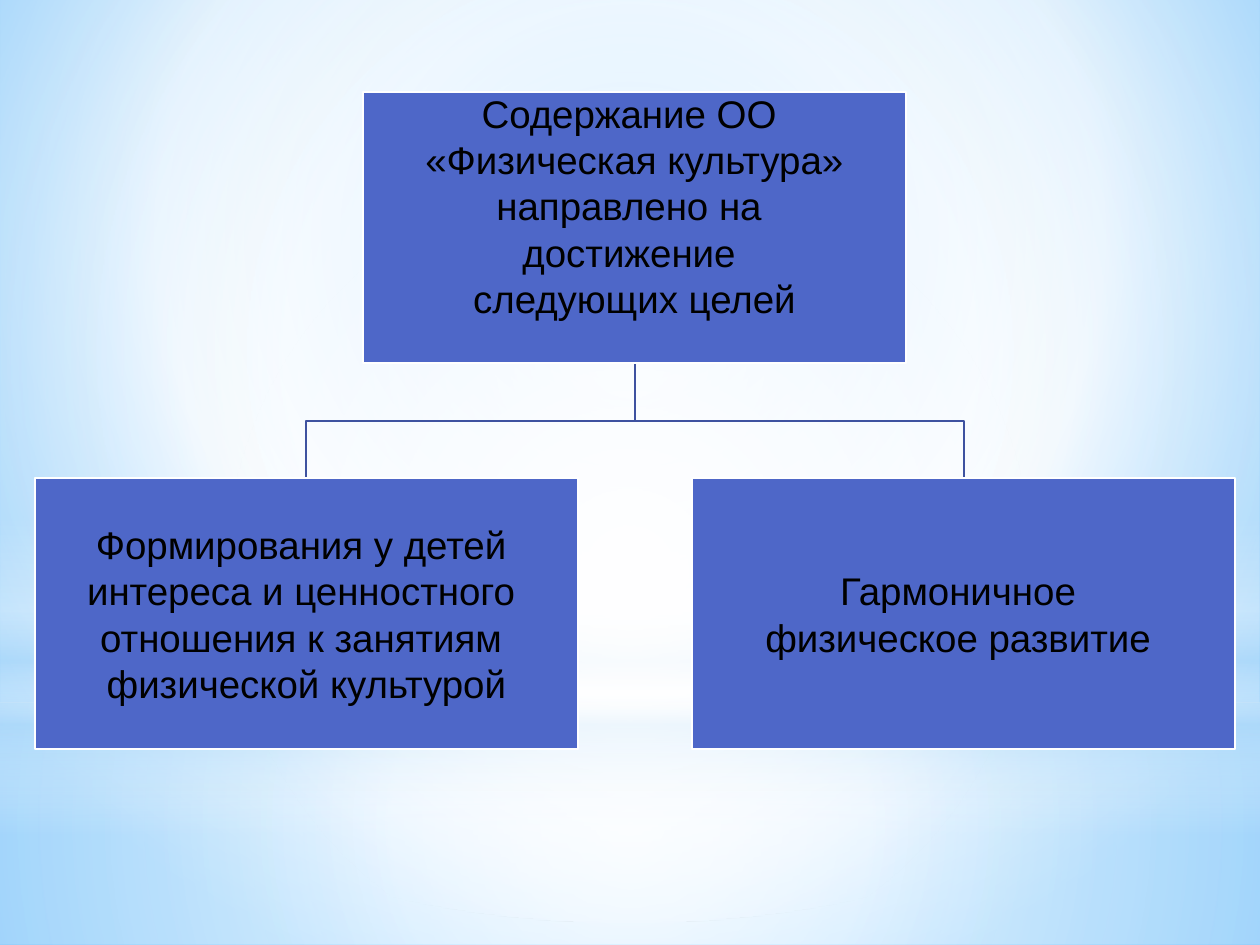
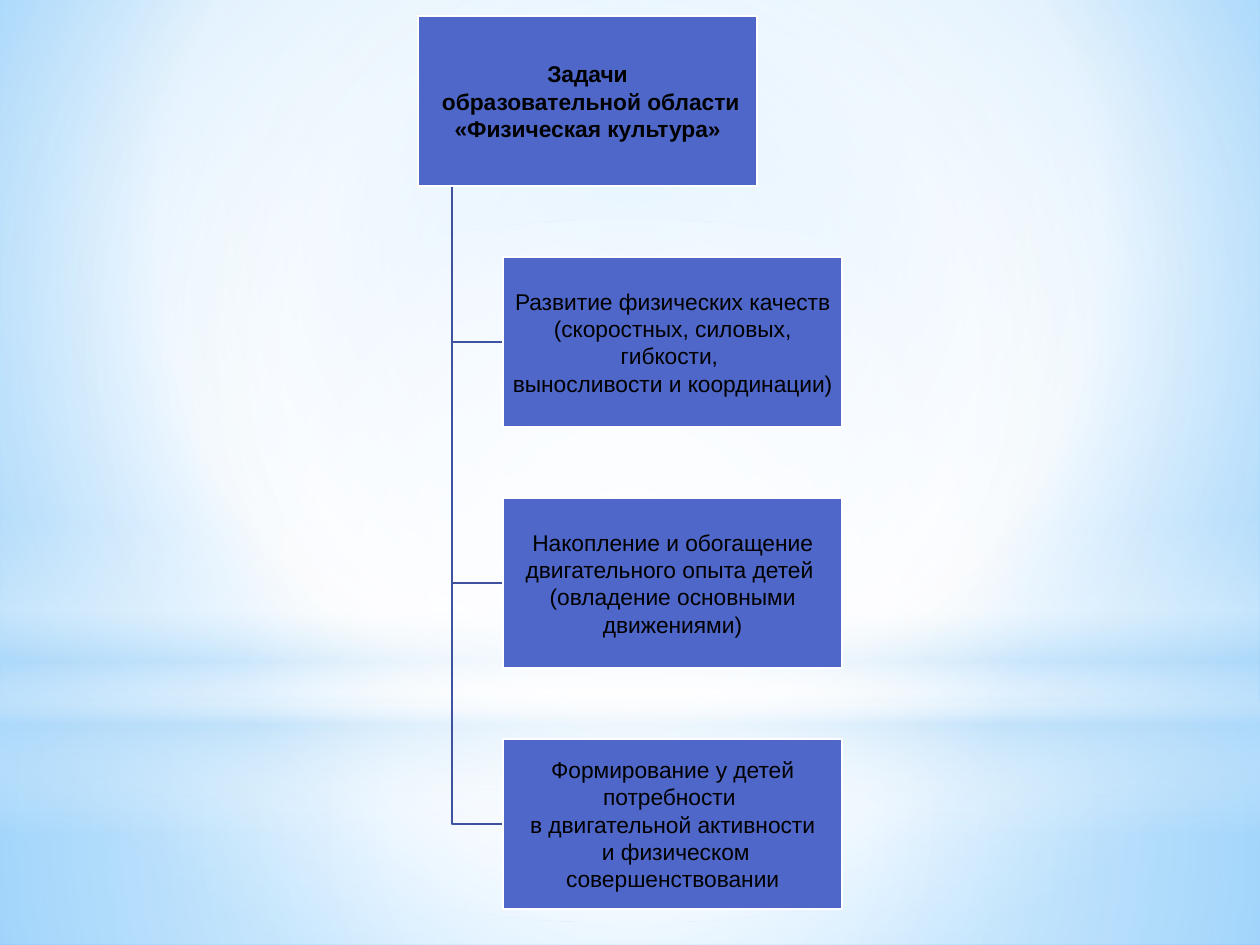
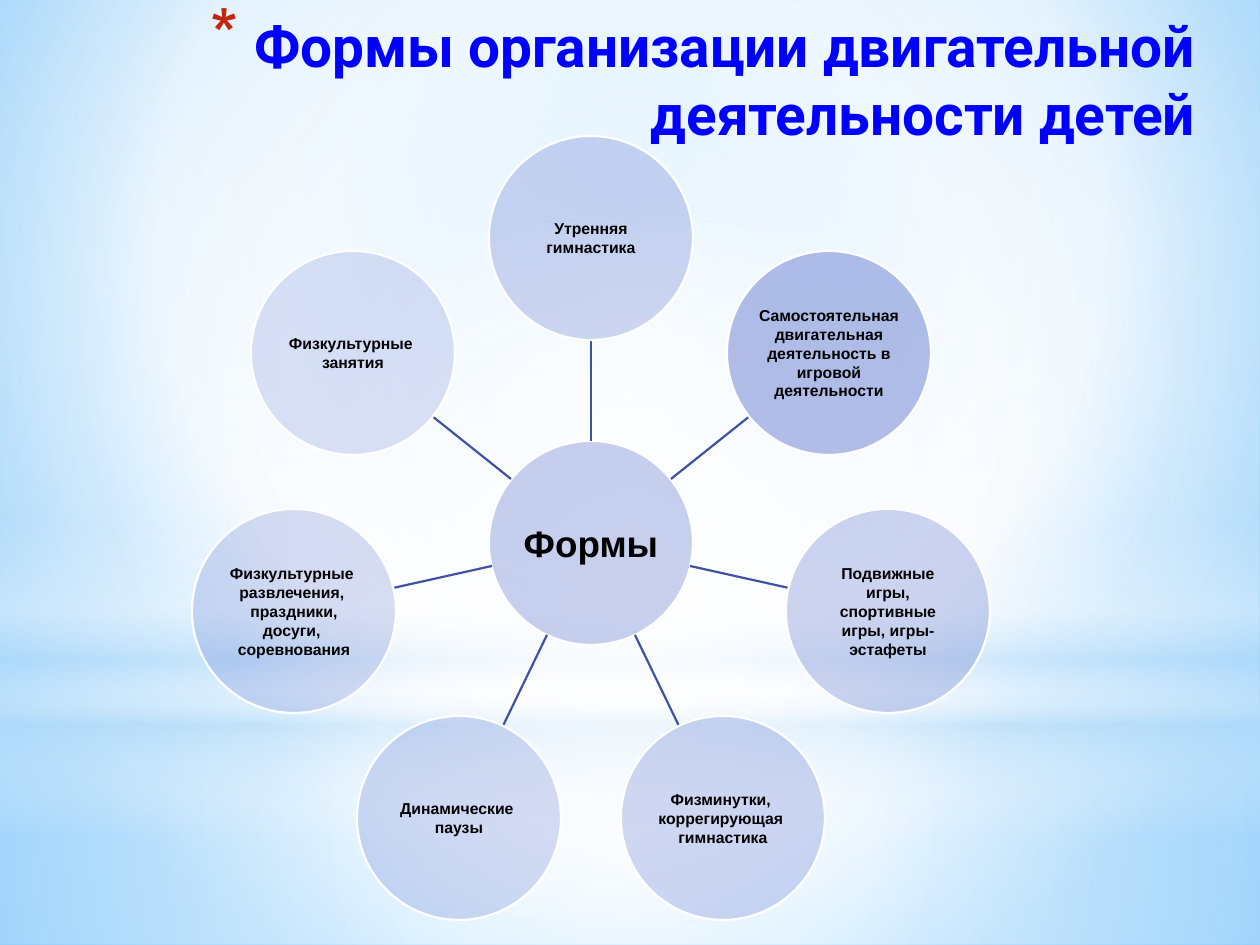
"""Build three slides of diagrams on the goals, tasks and forms of physical education."""
from math import cos, pi, sin

from lxml.etree import SubElement
from pptx import Presentation
from pptx.dml.color import RGBColor
from pptx.enum.shapes import MSO_CONNECTOR, MSO_SHAPE
from pptx.enum.text import MSO_ANCHOR, PP_ALIGN
from pptx.oxml.ns import qn
from pptx.util import Pt

PX = 7257
WIDTH, HEIGHT = 1260, 945
COLORS = {
    "node": "4E67C8", "branch": "3E52A0", "white": "FFFFFF", "haze": "B4DCFA",
    "sky": "9ED5FF", "deep": "5BB9FF", "text": "000000", "title": "0000FF", "bullet": "C3260C",
}
RGB = {name: RGBColor.from_string(value) for name, value in COLORS.items()}
LINE_WIDTH = Pt(1.25)
LEADING = 1.2


def paint_gradient(owner, stops, focus=None):
    """Fill with (position, colour, opacity) stops, around a focus or downwards."""
    fill = owner.fill if hasattr(owner, "fill") else owner.background.fill
    fill.gradient()
    gradient = next(owner.element.iter(qn("a:gradFill")))
    gradient.clear()
    stop_list = SubElement(gradient, qn("a:gsLst"))
    for position, name, opacity in stops:
        stop = SubElement(stop_list, qn("a:gs"), pos=str(position * 1000))
        color = SubElement(stop, qn("a:srgbClr"), val=COLORS[name])
        SubElement(color, qn("a:alpha"), val=str(opacity * 1000))
    if focus:
        radial = SubElement(gradient, qn("a:path"), path="circle")
        edges = {side: str(value * 1000) for side, value in zip("ltrb", focus)}
        SubElement(radial, qn("a:fillToRect"), **edges)
    else:
        SubElement(gradient, qn("a:lin"), ang="5400000", scaled="0")


def add_node(slide, kind, box, lines, size, bold=False, opacity=100, inset=1, bottom=1):
    """Add a filled shape with centred text lines."""
    shape = slide.shapes.add_shape(kind, *[value * PX for value in box])
    shape.shadow.inherit = False
    shape.fill.solid()
    shape.fill.fore_color.rgb = RGB["node"]
    if opacity < 100:
        color = next(shape.element.spPr.iter(qn("a:srgbClr")))
        SubElement(color, qn("a:alpha"), val=str(opacity * 1000))
    shape.line.color.rgb = RGB["white"]
    shape.line.width = LINE_WIDTH
    frame = shape.text_frame
    frame.text = "\n".join(lines)
    frame_format = {
        "word_wrap": True, "vertical_anchor": MSO_ANCHOR.MIDDLE, "margin_left": inset * PX,
        "margin_right": inset * PX, "margin_top": inset * PX, "margin_bottom": bottom * PX,
    }
    for name, value in frame_format.items():
        setattr(frame, name, value)
    for paragraph in frame.paragraphs:
        paragraph.alignment = PP_ALIGN.CENTER
        paragraph.line_spacing = Pt(size * LEADING)
        font = paragraph.runs[0].font
        for name, value in {"name": "Arial", "size": Pt(size), "bold": bold}.items():
            setattr(font, name, value)
        font.color.rgb = RGB["text"]


presentation = Presentation()
presentation.slide_width = WIDTH * PX
presentation.slide_height = HEIGHT * PX
layout = presentation.slide_layouts[6]
for placeholder in list(layout.placeholders):
    layout.shapes.element.remove(placeholder.element)
goals, tasks, forms = [presentation.slides.add_slide(layout) for _ in range(3)]

paint_gradient(layout, [(0, "sky", 100), (60, "white", 100), (100, "deep", 100)], (20, 10, 20, 60))
centre = (50, 50, 50, 50)
backdrop = [
    (MSO_SHAPE.RECTANGLE, 703, 242, centre,
     [(0, "white", 91), (37, "white", 76), (100, "haze", 79)]),
    (MSO_SHAPE.RECTANGLE, 0, 703, centre,
     [(0, "white", 89), (48, "white", 62), (100, "haze", 79)]),
    (MSO_SHAPE.RECTANGLE, 519, 315, None,
     [(0, "white", 0), (29, "white", 30), (45, "haze", 40),
      (55, "white", 26), (65, "haze", 60), (100, "white", 0)]),
    (MSO_SHAPE.OVAL, 220, 703, centre, [(0, "white", 100), (56, "white", 0)]),
]
for kind, top, height, focus, stops in backdrop:
    layer = goals.shapes.add_shape(kind, 0, top * PX, WIDTH * PX, height * PX)
    layer.shadow.inherit = False
    layer.line.fill.background()
    paint_gradient(layer, stops, focus)
    layout.shapes.element.append(layer.element)

branches = [(goals, [(635, 364), (635, 421), (x, 421), (x, 478)]) for x in (964, 306)]
branches += [(tasks, [(452, 186), (452, y), (503, y)]) for y in (824, 583, 342)]
for slide, points in branches:
    builder = slide.shapes.build_freeform(*points[0], scale=float(PX))
    builder.add_line_segments(points[1:], close=False)
    branch = builder.convert_to_shape()
    branch.shadow.inherit = False
    branch.fill.background()
    branch.line.color.rgb = RGB["branch"]
    branch.line.width = LINE_WIDTH

goal_nodes = [
    (363, 92, 46, ["Содержание ОО ", "«Физическая культура»", "направлено на ",
                   "достижение ", "следующих целей"]),
    (35, 478, 2, ["Формирования у детей ", "интереса и ценностного ",
                  "отношения к занятиям ", "физической культурой"]),
    (692, 478, 2, ["Гармоничное ", "физическое развитие "]),
]
for left, top, bottom, lines in goal_nodes:
    add_node(goals, MSO_SHAPE.RECTANGLE, (left, top, 543, 271), lines, 22, inset=2, bottom=bottom)

task_nodes = [
    ["Задачи", " образовательной области", "«Физическая культура»"],
    ["Развитие физических качеств", "(скоростных, силовых, гибкости, ",
     "выносливости и координации)"],
    ["Накопление и обогащение", "двигательного опыта детей ", "(овладение основными движениями)"],
    ["Формирование у детей потребности ", "в двигательной активности",
     " и физическом совершенствовании"],
]
for row, lines in enumerate(task_nodes):
    left = 503 if row else 418
    add_node(tasks, MSO_SHAPE.RECTANGLE, (left, 16 + 241 * row, 339, 170), lines, 13, bold=row == 0)

title = forms.shapes.add_textbox(74 * PX, 0, 1134 * PX, 157 * PX)
title.text_frame.word_wrap = True
title.text_frame.vertical_anchor = MSO_ANCHOR.MIDDLE
paragraph = title.text_frame.paragraphs[0]
paragraph.alignment = PP_ALIGN.RIGHT
paragraph.line_spacing = Pt(32.4 * LEADING)
run = paragraph.add_run()
run.text = "Формы организации двигательной деятельности детей"
for name, value in {"name": "Roboto", "size": Pt(32.4), "bold": True}.items():
    setattr(run.font, name, value)
run.font.color.rgb = RGB["title"]
properties = paragraph._p.get_or_add_pPr()
properties.set("marL", str(44 * PX))
properties.set("indent", str(-44 * PX))
SubElement(SubElement(properties, qn("a:buClr")), qn("a:srgbClr"), val=COLORS["bullet"])
SubElement(properties, qn("a:buSzPct"), val="128000")
SubElement(properties, qn("a:buChar"), char="*")

hub_x, hub_y, radius, orbit = 591, 543, 102, 305
diameter = 2 * radius
add_node(forms, MSO_SHAPE.OVAL, (hub_x - radius, hub_y - radius, diameter, diameter),
         ["Формы"], 21, bold=True, opacity=31)
form_nodes = [
    (26, ["Утренняя", "гимнастика"]),
    (42, ["Самостоятельная ", "двигательная", " деятельность в ", "игровой", "деятельности"]),
    (28, ["Подвижные", "игры, спортивные", " игры, игры- ", "эстафеты"]),
    (25, ["Физминутки, ", "коррегирующая ", "гимнастика"]),
    (22, ["Динамические ", "паузы"]),
    (22, ["Физкультурные ", "развлечения, ", "праздники,", "досуги, ", "соревнования"]),
    (19, ["Физкультурные ", "занятия"]),
]
for index, (opacity, lines) in enumerate(form_nodes):
    angle = 2 * pi * index / len(form_nodes)
    (x1, y1), (x2, y2), (x, y) = [
        (round(hub_x + reach * sin(angle)), round(hub_y - reach * cos(angle)))
        for reach in (radius, orbit - radius, orbit)
    ]
    spoke = forms.shapes.add_connector(MSO_CONNECTOR.STRAIGHT, x1 * PX, y1 * PX, x2 * PX, y2 * PX)
    spoke.line.color.rgb = RGB["branch"]
    spoke.line.width = LINE_WIDTH
    SubElement(spoke.element.spPr, qn("a:effectLst"))
    add_node(forms, MSO_SHAPE.OVAL, (x - radius, y - radius, diameter, diameter),
             lines, 9, bold=True, opacity=opacity)

presentation.save("out.pptx")
